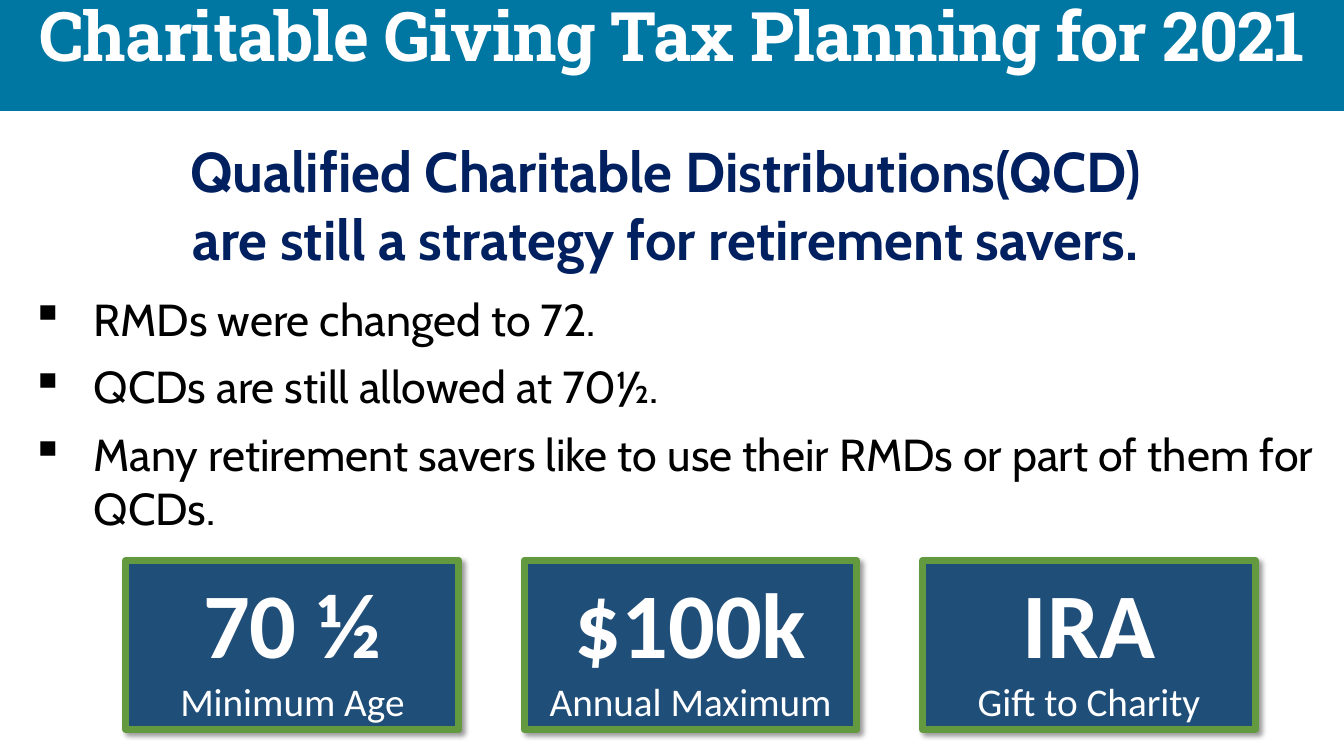
from lxml import etree
from pptx import Presentation
from pptx.dml.color import RGBColor
from pptx.enum.shapes import MSO_SHAPE
from pptx.enum.text import MSO_ANCHOR, MSO_AUTO_SIZE, PP_ALIGN
from pptx.oxml import parse_xml
from pptx.oxml.ns import nsdecls, qn
from pptx.util import Inches, Pt

TITLE = "Charitable Giving Tax Planning for 2021"
HEADING = ["Qualified Charitable Distributions(QCD)",
           "are still a strategy for retirement savers."]
POINTS = [
    "RMDs were changed to 72.",
    "QCDs are still allowed at 70½.",
    "Many retirement savers like to use their RMDs or part of them for QCDs.",
]
CARDS = [("70 ½", "Minimum Age"), ("$100k", "Annual Maximum"), ("IRA", "Gift to Charity")]

TEAL = RGBColor(0x00, 0x76, 0xA3)
NAVY = RGBColor(0x00, 0x20, 0x60)
BLUE = RGBColor(0x1F, 0x4E, 0x79)
GREEN = RGBColor(0x64, 0x9A, 0x3F)
WHITE = RGBColor(0xFF, 0xFF, 0xFF)
BLACK = RGBColor(0, 0, 0)
CENTER, TOP, MIDDLE = PP_ALIGN.CENTER, MSO_ANCHOR.TOP, MSO_ANCHOR.MIDDLE
NO_FIT, RECTANGLE = MSO_AUTO_SIZE.NONE, MSO_SHAPE.RECTANGLE

SLIDE_W, SLIDE_H = 13.33, 7.5
CARD_LEFT, CARD_TOP, CARD_W, CARD_H, CARD_STEP = 1.25, 5.56, 3.3, 1.68, 3.95
BULLET_INDENT = Inches(0.62)
CARD_SHADOW = (
    f'<a:effectLst {nsdecls("a")}>'
    f'<a:outerShdw blurRad="{Pt(4)}" dist="{Pt(3)}" dir="2700000" algn="tl" rotWithShape="0">'
    '<a:srgbClr val="000000"><a:alpha val="40000"/></a:srgbClr>'
    '</a:outerShdw></a:effectLst>')


def add_run(paragraph, text, font, size, color, bold=False):
    run = paragraph.add_run()
    run.text = text
    run.font.name = font
    run.font.size = Pt(size)
    run.font.color.rgb = color
    run.font.bold = bold
    return run


def add_text_frame(slide, left, top, width, height):
    frame = slide.shapes.add_textbox(
        Inches(left), Inches(top), Inches(width), Inches(height)).text_frame
    frame.word_wrap = True
    return frame


def add_title(slide):
    title = slide.shapes.title
    title.left, title.top = 0, 0
    title.width, title.height = Inches(SLIDE_W), Inches(1.1)
    title.fill.solid()
    title.fill.fore_color.rgb = TEAL
    frame = title.text_frame
    frame.auto_size = NO_FIT
    frame.vertical_anchor = TOP
    frame.margin_top = Inches(0.02)
    paragraph = frame.paragraphs[0]
    paragraph.alignment = CENTER
    paragraph.line_spacing = 0.9
    run = add_run(paragraph, TITLE, "Roboto Slab", 48.8, WHITE, True)
    run.font._element.set("spc", "-60")


def add_heading(slide):
    paragraph = add_text_frame(slide, 0, 1.31, 13.2, 1.45).paragraphs[0]
    paragraph.alignment = CENTER
    for i, line in enumerate(HEADING):
        if i:
            paragraph.add_line_break()
        add_run(paragraph, line, "Cabin", 40, NAVY, True)


def add_points(slide):
    frame = add_text_frame(slide, 0.21, 2.84, 13.12, 2.54)
    for i, point in enumerate(POINTS):
        paragraph = frame.add_paragraph() if i else frame.paragraphs[0]
        if i:
            paragraph.space_before = Pt(10)
        properties = paragraph._p.get_or_add_pPr()
        properties.set("marL", str(BULLET_INDENT))
        properties.set("indent", str(-BULLET_INDENT))
        etree.SubElement(properties, qn("a:buChar")).set("char", "▪")
        add_run(paragraph, point, "Cabin", 32, BLACK)


def add_card(slide, left, figure, caption):
    card = slide.shapes.add_shape(
        RECTANGLE, Inches(left), Inches(CARD_TOP), Inches(CARD_W), Inches(CARD_H))
    card.fill.solid()
    card.fill.fore_color.rgb = BLUE
    card.line.color.rgb = GREEN
    card.line.width = Pt(5)
    etree.SubElement(card.line._ln, qn("a:round"))
    card._element.spPr.append(parse_xml(CARD_SHADOW))
    frame = card.text_frame
    frame.word_wrap = True
    frame.vertical_anchor = MIDDLE
    paragraph = frame.paragraphs[0]
    paragraph.alignment = CENTER
    add_run(paragraph, figure, "Calibri", 66, WHITE, True)
    paragraph.add_line_break()
    add_run(paragraph, caption, "Calibri", 28, WHITE)


def main():
    deck = Presentation()
    deck.slide_width, deck.slide_height = Inches(SLIDE_W), Inches(SLIDE_H)
    slide = deck.slides.add_slide(deck.slide_layouts[5])
    add_title(slide)
    add_heading(slide)
    add_points(slide)
    for i, (figure, caption) in enumerate(CARDS):
        add_card(slide, CARD_LEFT + i * CARD_STEP, figure, caption)
    deck.save("out.pptx")


if __name__ == "__main__":
    main()
